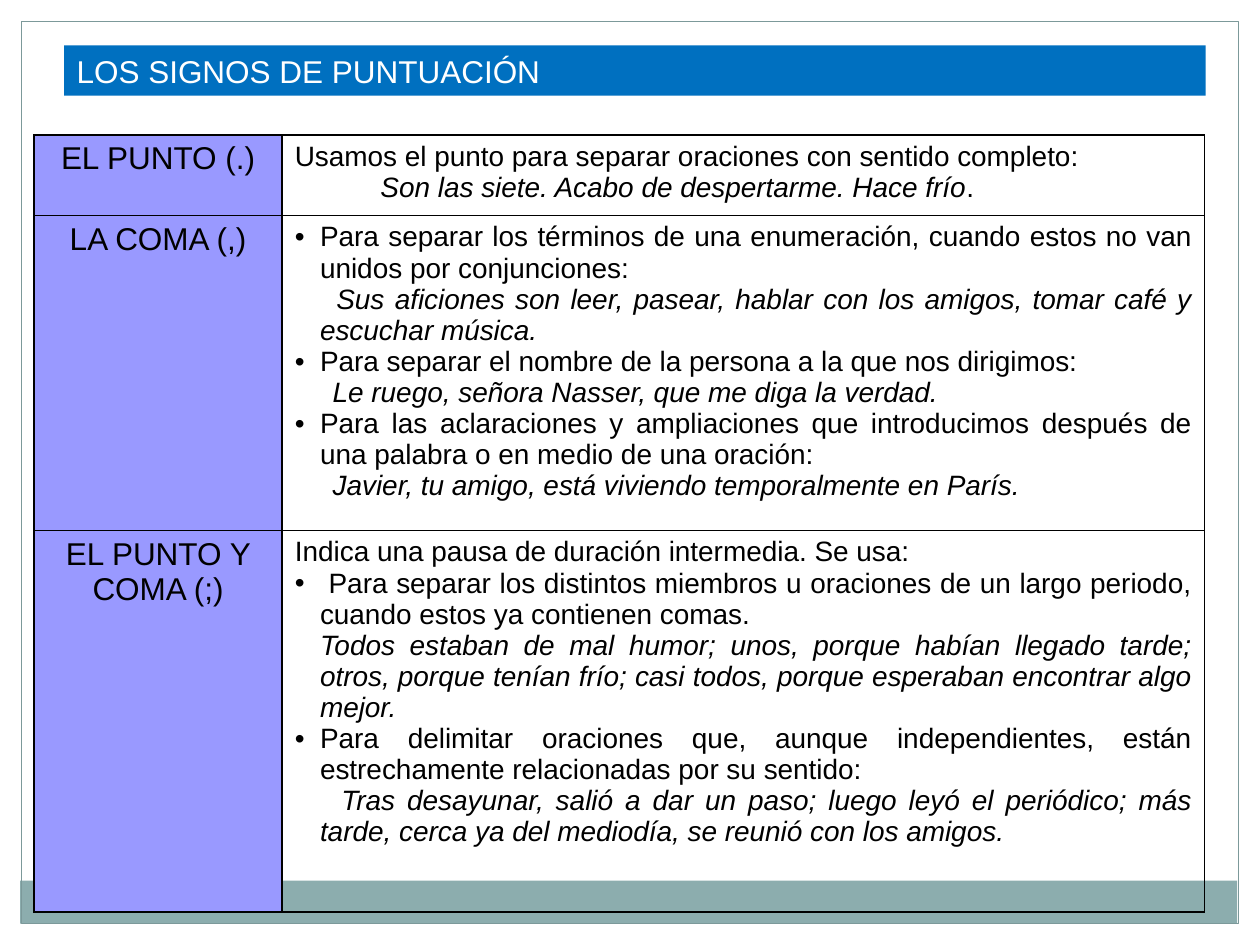
from dataclasses import dataclass

from lxml.etree import SubElement
from pptx import Presentation
from pptx.dml.color import RGBColor
from pptx.enum.shapes import MSO_SHAPE
from pptx.enum.text import MSO_ANCHOR, PP_ALIGN
from pptx.oxml.ns import qn
from pptx.util import Inches, Pt

FONT = "Arial"
BLACK = "000000"
LILAC = "9999FF"


@dataclass
class Entry:
    text: str
    italic: bool = False
    bullet: bool = False
    margin: float = 0.2
    first_line: float = 0.0
    ending: str = ""


@dataclass
class Sign:
    name: str
    height: float
    entries: list[Entry]


SIGNS = [
    Sign("EL PUNTO (.)", 0.64, [
        Entry("Usamos el punto para separar oraciones con sentido completo:", margin=0),
        Entry("Son las siete. Acabo de despertarme. Hace frío", italic=True,
              margin=0, first_line=0.68, ending="."),
    ]),
    Sign("LA COMA (,)", 2.5, [
        Entry("Para separar los términos de una enumeración, cuando estos no van "
              "unidos por conjunciones:", bullet=True),
        Entry("Sus aficiones son leer, pasear, hablar con los amigos, tomar café y "
              "escuchar música.", italic=True, first_line=0.13),
        Entry("Para separar el nombre de la persona a la que nos dirigimos:", bullet=True),
        Entry("Le ruego, señora Nasser, que me diga la verdad.", italic=True, first_line=0.1),
        Entry("Para las aclaraciones y ampliaciones que introducimos después de una "
              "palabra o en medio de una oración:", bullet=True),
        Entry("Javier, tu amigo, está viviendo temporalmente en París.",
              italic=True, first_line=0.1),
    ]),
    Sign("EL PUNTO Y COMA (;)", 3.03, [
        Entry("Indica una pausa de duración intermedia. Se usa:", margin=0),
        Entry(" Para separar los distintos miembros u oraciones de un largo periodo, "
              "cuando estos ya contienen comas.", bullet=True),
        Entry("Todos estaban de mal humor; unos, porque habían llegado tarde; otros, "
              "porque tenían frío; casi todos, porque esperaban encontrar algo mejor.",
              italic=True),
        Entry("Para delimitar oraciones que, aunque independientes, están "
              "estrechamente relacionadas por su sentido:", bullet=True),
        Entry("Tras desayunar, salió a dar un paso; luego leyó el periódico; más tarde, "
              "cerca ya del mediodía, se reunió con los amigos.",
              italic=True, first_line=0.17),
    ]),
]


def color(value: str) -> RGBColor:
    return RGBColor.from_string(value)


def format_run(run, size: float, value: str = BLACK, italic: bool = False) -> None:
    run.font.name = FONT
    run.font.size = Pt(size)
    run.font.italic = italic
    run.font.color.rgb = color(value)


def add_rectangle(slide, left: float, top: float, width: float, height: float,
                  fill: str | None = None, line: str | None = None):
    shape = slide.shapes.add_shape(MSO_SHAPE.RECTANGLE, Inches(left), Inches(top),
                                   Inches(width), Inches(height))
    shape.shadow.inherit = False
    if fill:
        shape.fill.solid()
        shape.fill.fore_color.rgb = color(fill)
    else:
        shape.fill.background()
    if line:
        shape.line.color.rgb = color(line)
        shape.line.width = Pt(0.75)
    else:
        shape.line.fill.background()
    return shape


def add_title(slide, text: str) -> None:
    shape = add_rectangle(slide, 0.51, 0.36, 9.06, 0.4, fill="0070C0")
    shape.text_frame.text = text
    shape.text_frame.vertical_anchor = MSO_ANCHOR.MIDDLE
    paragraph = shape.text_frame.paragraphs[0]
    paragraph.alignment = PP_ALIGN.LEFT
    format_run(paragraph.runs[0], 18, "FFFFFF")


def set_borders(cell) -> None:
    properties = cell._tc.get_or_add_tcPr()
    for side in ("lnL", "lnR", "lnT", "lnB"):
        border = SubElement(properties, qn(f"a:{side}"), w=str(Pt(1)))
        fill = SubElement(border, qn("a:solidFill"))
        SubElement(fill, qn("a:srgbClr"), val=BLACK)


def fill_name(cell, name: str) -> None:
    set_borders(cell)
    cell.fill.solid()
    cell.fill.fore_color.rgb = color(LILAC)
    cell.text_frame.text = name
    paragraph = cell.text_frame.paragraphs[0]
    paragraph.alignment = PP_ALIGN.CENTER
    format_run(paragraph.runs[0], 18)


def write_entry(paragraph, entry: Entry) -> None:
    paragraph.text = entry.text
    paragraph.alignment = PP_ALIGN.JUSTIFY
    properties = paragraph._p.get_or_add_pPr()
    first_line = -entry.margin if entry.bullet else entry.first_line
    properties.set("marL", str(Inches(entry.margin)))
    properties.set("indent", str(Inches(first_line)))
    if entry.bullet:
        SubElement(properties, qn("a:buFont"), typeface=FONT)
        SubElement(properties, qn("a:buChar"), char="•")
    else:
        SubElement(properties, qn("a:buNone"))
    format_run(paragraph.runs[0], 16, italic=entry.italic)
    if entry.ending:
        run = paragraph.add_run()
        run.text = entry.ending
        format_run(run, 16)


def fill_uses(cell, entries: list[Entry]) -> None:
    set_borders(cell)
    cell.fill.background()
    for index, entry in enumerate(entries):
        text_frame = cell.text_frame
        paragraph = text_frame.add_paragraph() if index else text_frame.paragraphs[0]
        write_entry(paragraph, entry)


def add_sign_table(slide, signs: list[Sign]) -> None:
    widths = (1.97, 7.32)
    height = sum(sign.height for sign in signs)
    table = slide.shapes.add_table(len(signs), len(widths), Inches(0.27), Inches(1.07),
                                   Inches(sum(widths)), Inches(height)).table
    table.first_row = False
    table.horz_banding = False
    for column, width in zip(table.columns, widths):
        column.width = Inches(width)
    for index, sign in enumerate(signs):
        table.rows[index].height = Inches(sign.height)
        fill_name(table.cell(index, 0), sign.name)
        fill_uses(table.cell(index, 1), sign.entries)


def main() -> None:
    presentation = Presentation()
    presentation.slide_width = Inches(10)
    presentation.slide_height = Inches(7.5)
    slide = presentation.slides.add_slide(presentation.slide_layouts[6])
    add_rectangle(slide, 0.16, 6.99, 9.66, 0.34, fill="8CADAE")
    add_rectangle(slide, 0.17, 0.17, 9.66, 7.16, line="7C999A")
    add_title(slide, "LOS SIGNOS DE PUNTUACIÓN")
    add_sign_table(slide, SIGNS)
    presentation.save("out.pptx")


if __name__ == "__main__":
    main()
